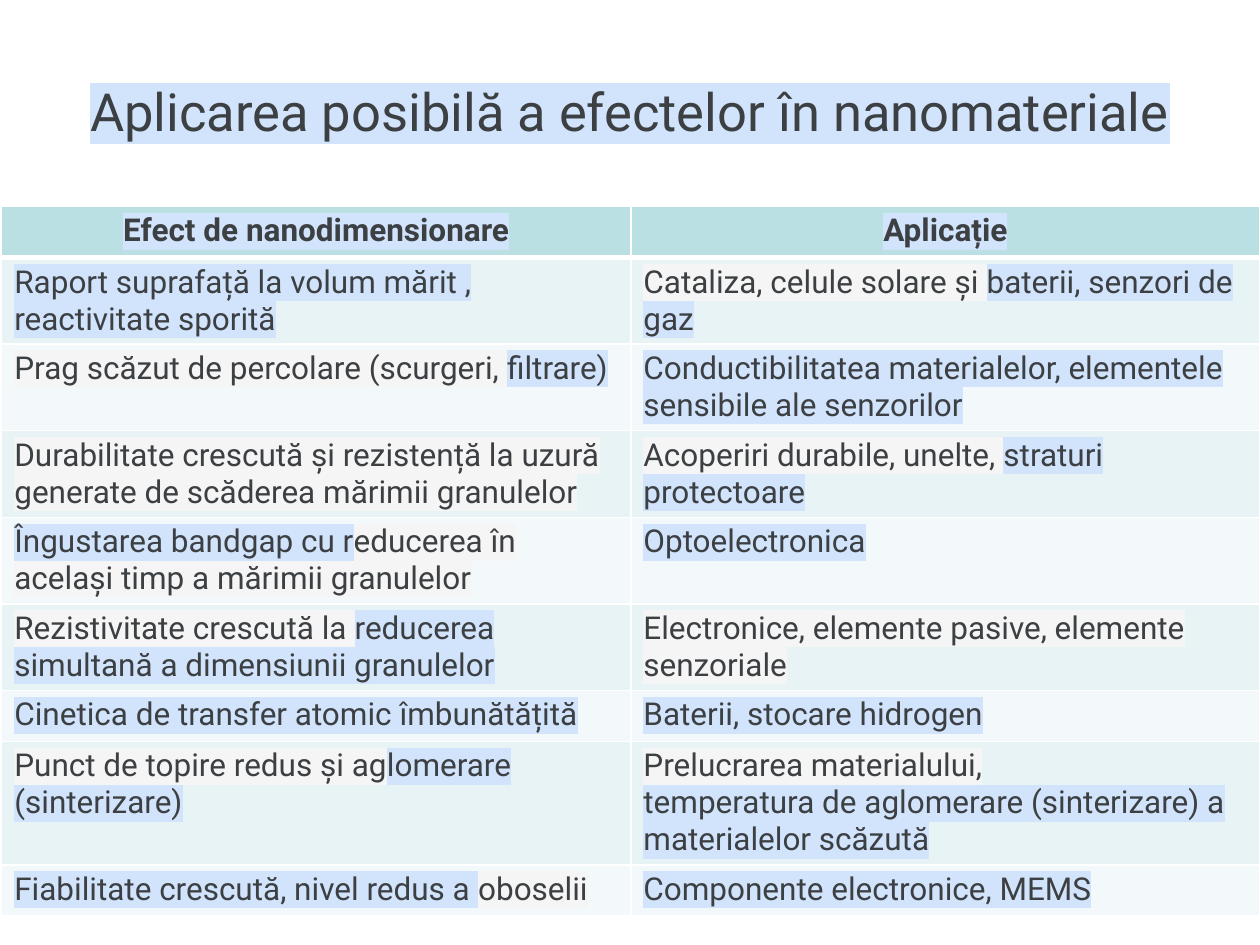
"""Builds a slide with a table of nano effects and their uses."""
from lxml.etree import SubElement as Sub, Element as Elem
from pptx import Presentation as Deck
from pptx.dml.color import RGBColor as Color
from pptx.enum.text import MSO_ANCHOR as Anchor, PP_ALIGN as Align
from pptx.oxml.ns import qn
from pptx.util import Pt

GRAY, BLUE = "F5F5F5", "D2E3FC"
INK, WHITE = "3C4043", "FFFFFF"
HEAD, ODD, EVEN = "BBE0E3", "E7F3F4", "F3F9FA"

ROWS = [
    ("|Efect de nanodimensionare", "|Aplicație"),
    ("|Raport suprafață la volum mărit , reactivitate sporită",
     "Cataliza, celule solare și |baterii, senzori de gaz"),
    ("Prag scăzut de percolare (scurgeri, |filtrare)",
     "|Conductibilitatea materialelor, elementele sensibile ale senzorilor"),
    ("Durabilitate crescută și rezistență la uzură generate de scăderea mărimii granulelor",
     "Acoperiri durabile, unelte, |straturi protectoare"),
    ("|Îngustarea bandgap cu r|educerea în același timp a mărimii granulelor",
     "|Optoelectronica"),
    ("Rezistivitate crescută la |reducerea simultană a dimensiunii granulelor",
     "Electronice, elemente pasive, elemente senzoriale"),
    ("|Cinetica de transfer atomic îmbunătățită", "|Baterii, stocare hidrogen"),
    ("Punct de topire redus și ag|lomerare (sinterizare)",
     "Prelucrarea materialului,\n|temperatura de aglomerare (sinterizare) a materialelor scăzută"),
    ("|Fiabilitate crescută, nivel redus a |oboselii",
     "|Componente electronice, MEMS"),
]


def paint(code):
    """Turn a hex string into a colour."""
    return Color.from_string(code)


def write(frame, text, size=18, bold=False, align=Align.LEFT, font="Roboto"):
    """Fill a frame; each bar in a line switches between gray and blue marking."""
    for i, line in enumerate(text.split("\n")):
        para = frame.add_paragraph() if i else frame.paragraphs[0]
        para.alignment = align
        for j, part in enumerate(line.split("|")):
            if not part:
                continue
            run = para.add_run()
            run.text = part
            run.font.size, run.font.bold, run.font.name = Pt(size), bold, font
            run.font.color.rgb = paint(INK)
            mark = Elem(qn("a:highlight"))
            Sub(mark, qn("a:srgbClr"), val=BLUE if j % 2 else GRAY)
            run.font.fill
            run._r.rPr.find(qn("a:solidFill")).addnext(mark)


def edge(cell, widths):
    """Draw white borders of the given widths, keyed by side."""
    props = cell._tc.get_or_add_tcPr()
    for i, (side, width) in enumerate(widths.items()):
        line = Elem(qn(f"a:ln{side}"), w=str(Pt(width)))
        Sub(Sub(line, qn("a:solidFill")), qn("a:srgbClr"), val=WHITE)
        props.insert(i, line)


class Page:
    """Holds the deck and its current slide."""

    def __init__(self):
        """Start a deck with one title-only slide."""
        self.deck = Deck()
        self.deck.slide_width, self.deck.slide_height = Pt(720), Pt(540)
        self.slide = self.deck.slides.add_slide(self.deck.slide_layouts[5])

    def title(self, text, box, size):
        """Place and write the title."""
        head = self.slide.shapes.title
        head.left, head.top, head.width, head.height = map(Pt, box)
        head.text_frame.vertical_anchor = Anchor.MIDDLE
        write(head.text_frame, text, size, align=Align.CENTER)

    def table(self, rows, left, top, width, high):
        """Add a banded table with a bold, centred first row."""
        box = map(Pt, (left, top, width, high * len(rows)))
        grid = self.slide.shapes.add_table(len(rows), len(rows[0]), *box).table
        for i, row in enumerate(rows):
            first = i == 0
            fill = HEAD if first else ODD if i % 2 else EVEN
            for j, text in enumerate(row):
                cell = grid.cell(i, j)
                cell.fill.solid()
                cell.fill.fore_color.rgb = paint(fill)
                edge(cell, {"L": 1, "R": 1, "T": 3 if i == 1 else 1, "B": 3 if first else 1})
                write(cell.text_frame, text, bold=first,
                      align=Align.CENTER if first else Align.LEFT)


def main():
    """Build and save the slide."""
    page = Page()
    page.title("|Aplicarea posibilă a efectelor în nanomateriale", (36, 18, 648, 90), 30)
    page.table(ROWS, 1, 118, 719, 29.2)
    page.deck.save("out.pptx")


if __name__ == "__main__":
    main()
